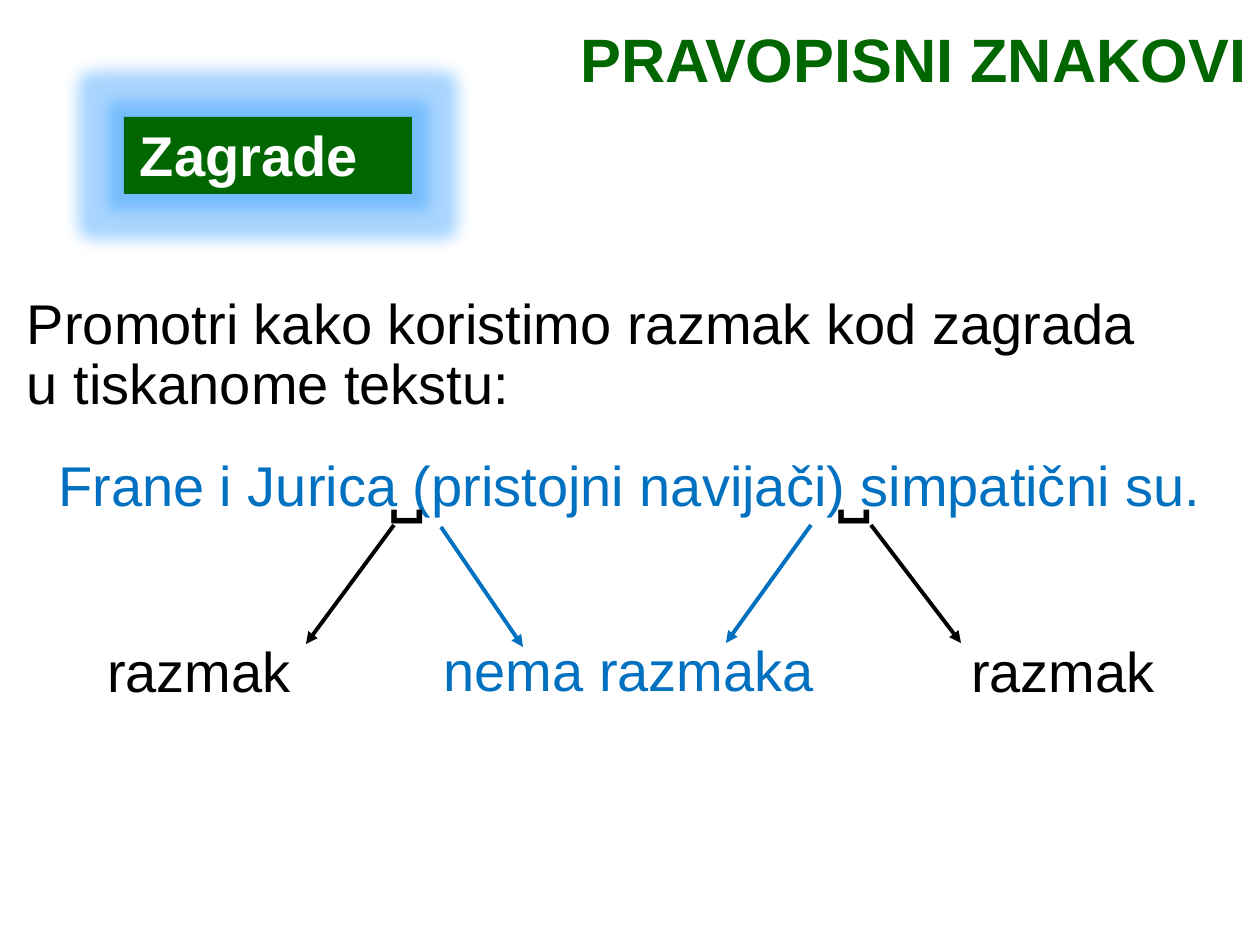
from dataclasses import dataclass

from lxml.etree import SubElement
from pptx import Presentation
from pptx.dml.color import RGBColor
from pptx.enum.shapes import MSO_CONNECTOR, MSO_SHAPE
from pptx.enum.text import MSO_ANCHOR as ANCHOR, MSO_AUTO_SIZE as AUTO_SIZE, PP_ALIGN as ALIGN
from pptx.oxml.ns import qn
from pptx.util import Emu, Pt

PX_PER_INCH = 126
COLOURS = {"green": "006600", "blue": "0070C0", "black": "000000",
           "white": "FFFFFF", "glow": "2896FF"}


@dataclass
class Label:
    text: str
    box: tuple[int, int, int, int]
    colour: str = "black"
    size: int = 32
    align: ALIGN = ALIGN.CENTER
    anchor: ANCHOR = ANCHOR.TOP
    bold: bool = False
    line_spacing: float = 0.9
    space_before: float = 7.5
    insets: tuple[int, int] = (13, 6)


@dataclass
class Arrow:
    start: tuple[int, int]
    end: tuple[int, int]
    colour: str


TITLE = Label("PRAVOPISNI ZNAKOVI", (131, 6, 1129, 96), "green", 35, ALIGN.RIGHT,
              ANCHOR.BOTTOM, bold=True, space_before=0)
TOPIC_BOX = (124, 117, 288, 77)
SPACE_MARK_TOP = 428
ANSWER_TOP = 637
LABELS = [
    Label("Zagrade", (131, 87, 270, 106), "white", 32, ALIGN.LEFT, ANCHOR.BOTTOM,
          bold=True, line_spacing=1.0, space_before=10, insets=(9, 5)),
    Label("Promotri kako koristimo razmak kod zagrada u tiskanome tekstu:",
          (14, 290, 1179, 159), align=ALIGN.LEFT),
    Label("Frane i Jurica (pristojni navijači) simpatični su.", (0, 452, 1260, 91), "blue"),
    *(Label("˽", (left, SPACE_MARK_TOP, 103, 91), size=48) for left in (356, 803)),
    Label("nema razmaka", (294, ANSWER_TOP, 670, 91), "blue"),
    *(Label("razmak", (left, ANSWER_TOP + 1, 314, 91)) for left in (42, 906)),
]
ARROWS = [
    Arrow((394, 525), (306, 644), "black"),
    Arrow((441, 527), (523, 647), "blue"),
    Arrow((811, 525), (726, 643), "blue"),
    Arrow((871, 525), (961, 643), "black"),
]


def px(length: int) -> Emu:
    return Emu(round(length * 914400 / PX_PER_INCH))


def rgb(name: str) -> RGBColor:
    return RGBColor.from_string(COLOURS[name])


def write_label(shape, label: Label) -> None:
    """Place a text box or placeholder and format its single paragraph."""
    shape.left, shape.top, shape.width, shape.height = map(px, label.box)
    frame = shape.text_frame
    frame.text = label.text
    frame.word_wrap = True
    frame.auto_size = AUTO_SIZE.NONE
    frame.vertical_anchor = label.anchor
    frame.margin_left = frame.margin_right = px(label.insets[0])
    frame.margin_top = frame.margin_bottom = px(label.insets[1])
    paragraph = frame.paragraphs[0]
    paragraph.alignment = label.align
    paragraph.line_spacing = label.line_spacing
    paragraph.space_before = Pt(label.space_before)
    font = paragraph.runs[0].font
    font.name, font.size, font.bold = "Arial", Pt(label.size), label.bold
    font.color.rgb = rgb(label.colour)


def add_glowing_box(slide, box: tuple[int, int, int, int]) -> None:
    rectangle = slide.shapes.add_shape(MSO_SHAPE.RECTANGLE, *map(px, box))
    rectangle.fill.solid()
    rectangle.fill.fore_color.rgb = rgb("green")
    rectangle.line.fill.background()
    rectangle.shadow.inherit = False
    effects = rectangle._element.spPr.find(qn("a:effectLst"))
    glow = SubElement(effects, qn("a:glow"), rad=str(Pt(18)))
    tint = SubElement(glow, qn("a:srgbClr"), val=COLOURS["glow"])
    SubElement(tint, qn("a:alpha"), val="40000")


def add_arrow(slide, arrow: Arrow) -> None:
    line = slide.shapes.add_connector(
        MSO_CONNECTOR.STRAIGHT, *map(px, arrow.start + arrow.end))
    line.line.color.rgb = rgb(arrow.colour)
    line.line.width = Pt(2.25)
    SubElement(line.line._get_or_add_ln(), qn("a:tailEnd"), type="triangle")
    SubElement(line._element.spPr, qn("a:effectLst"))


def main() -> None:
    deck = Presentation()
    deck.slide_width, deck.slide_height = px(1260), px(945)
    slide = deck.slides.add_slide(deck.slide_layouts[5])
    write_label(slide.shapes.title, TITLE)
    add_glowing_box(slide, TOPIC_BOX)
    for label in LABELS:
        write_label(slide.shapes.add_textbox(0, 0, 0, 0), label)
    for arrow in ARROWS:
        add_arrow(slide, arrow)
    deck.save("out.pptx")


if __name__ == "__main__":
    main()
